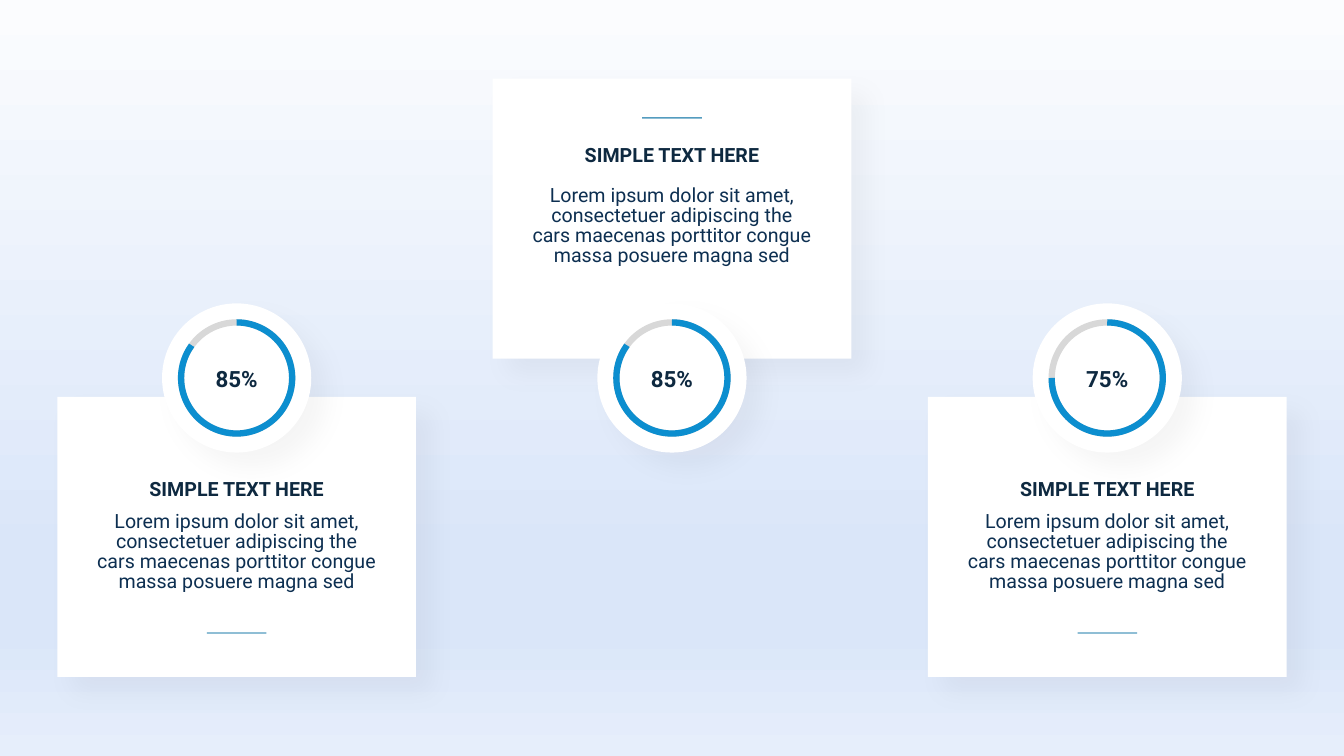
import pptx
import pptx.util
import pptx.dml.color
import pptx.enum.shapes
import pptx.enum.text
import pptx.oxml
import pptx.oxml.ns
from dataclasses import dataclass
from pptx.util import Cm, Pt

# Content: column, placement, percentage, heading, body
HEADING = "SIMPLE TEXT HERE"
BODY = ("Lorem ipsum dolor sit amet, consectetuer adipiscing the "
        "cars maecenas porttitor congue massa posuere magna sed")
CARDS = [
    (-1, "low", 85, HEADING, BODY),
    (1, "low", 75, HEADING, BODY),
    (0, "high", 85, HEADING, BODY),
]


@dataclass(frozen=True)
class Theme:
    font: str = "Roboto"
    white: str = "FFFFFF"
    heading: str = "0E2940"
    body: str = "0D2F51"
    rule: str = "0C72A5"
    track: str = "D8D8D8"
    progress: str = "0C8ECF"
    background: tuple = ((0, "FBFCFE"), (74, "DAE6F9"), (83, "DAE6F9"), (100, "E6EEFB"))
    text_size: int = 14
    percent_size: int = 16
    ring_width: float = 4.5


THEME = Theme()

# Geometry in centimetres
SLIDE_WIDTH, SLIDE_HEIGHT = 33.87, 19.05
COLUMN_PITCH = 10.97
CARD_WIDTH, CARD_HEIGHT = 9.04, 7.06
DISC_SIZE, RING_SIZE = 3.76, 2.8
RULE_LENGTH = 1.5
TOPS = {
    "low": {"card": 10.0, "heading": 11.89, "body": 12.8, "rule": 15.95},
    "high": {"card": 1.98, "heading": 3.48, "body": 4.57, "rule": 2.97},
}


def rgb(value):
    return pptx.dml.color.RGBColor.from_string(value)


def add_xml(parent, markup):
    parent.append(pptx.oxml.parse_xml(
        markup.replace("/>", f" {pptx.oxml.ns.nsdecls('a')}/>", 1)
        if markup.endswith("/>") and markup.count("<") == 1
        else markup.replace(">", f" {pptx.oxml.ns.nsdecls('a')}>", 1)))


def add_panel(shapes, kind, center, top, width, height, fill=None, line=None):
    """Preset shape: filled ones cast the soft shadow, others are outlined."""
    shape = shapes.add_shape(kind, Cm(center - width / 2), Cm(top), Cm(width), Cm(height))
    shape.shadow.inherit = False
    if fill:
        shape.fill.solid()
        shape.fill.fore_color.rgb = rgb(fill)
        shape.line.fill.background()
        effects = shape._element.spPr.find(pptx.oxml.ns.qn("a:effectLst"))
        add_xml(effects, f'<a:outerShdw blurRad="{Pt(18)}" dist="{Pt(15)}" dir="2700000" '
                         'algn="tl" rotWithShape="0"><a:srgbClr val="000000">'
                         '<a:alpha val="4000"/></a:srgbClr></a:outerShdw>')
    else:
        shape.fill.background()
        shape.line.color.rgb = rgb(line)
        shape.line.width = Pt(THEME.ring_width)
    return shape


def add_text(shapes, text, *, center, top, width, height, size, color,
             bold=False, spacing=None):
    box = shapes.add_textbox(Cm(center - width / 2), Cm(top), Cm(width), Cm(height))
    frame = box.text_frame
    frame.word_wrap = True
    frame.auto_size = pptx.enum.text.MSO_AUTO_SIZE.SHAPE_TO_FIT_TEXT
    paragraph = frame.paragraphs[0]
    paragraph.alignment = pptx.enum.text.PP_ALIGN.CENTER
    if spacing:
        paragraph.line_spacing = spacing
    run = paragraph.add_run()
    run.text = text
    run.font.name = THEME.font
    run.font.size = Pt(size)
    run.font.bold = bold
    run.font.color.rgb = rgb(color)


def add_rule(shapes, center, top):
    rule = shapes.add_connector(
        pptx.enum.shapes.MSO_CONNECTOR.STRAIGHT,
        Cm(center - RULE_LENGTH / 2), Cm(top), Cm(center + RULE_LENGTH / 2), Cm(top))
    rule.line.color.rgb = rgb(THEME.rule)
    rule.line.width = Pt(1)
    properties = rule._element.spPr
    color = properties.find(".//" + pptx.oxml.ns.qn("a:srgbClr"))
    add_xml(color, '<a:alpha val="69000"/>')
    add_xml(properties, "<a:effectLst/>")


def add_dial(slide, center, percent):
    shapes = slide.shapes.add_group_shape().shapes
    kinds = pptx.enum.shapes.MSO_SHAPE
    middle = SLIDE_HEIGHT / 2
    add_panel(shapes, kinds.OVAL, center, middle - DISC_SIZE / 2,
              DISC_SIZE, DISC_SIZE, fill=THEME.white)
    ring = (center, middle - RING_SIZE / 2, RING_SIZE, RING_SIZE)
    add_panel(shapes, kinds.OVAL, *ring, line=THEME.track)
    arc = add_panel(shapes, kinds.ARC, *ring, line=THEME.progress)
    # Adjustments hold 0.6 per degree, clockwise from three o'clock
    arc.adjustments[0] = 270 * 0.6
    arc.adjustments[1] = (270 + 3.6 * percent) % 360 * 0.6
    add_text(shapes, f"{percent}%", center=center, top=9.07, width=2.49, height=0.94,
             size=THEME.percent_size, color=THEME.heading, bold=True)


def set_background(slide):
    fill = slide.background.fill
    fill.gradient()
    fill.gradient_angle = 270
    stops = slide._element.find(".//" + pptx.oxml.ns.qn("a:gsLst"))
    for stop in list(stops):
        stops.remove(stop)
    for position, color in THEME.background:
        add_xml(stops, f'<a:gs pos="{position * 1000}"><a:srgbClr val="{color}"/></a:gs>')


def main():
    presentation = pptx.Presentation()
    presentation.slide_width = Cm(SLIDE_WIDTH)
    presentation.slide_height = Cm(SLIDE_HEIGHT)
    slide = presentation.slides.add_slide(presentation.slide_layouts[6])
    set_background(slide)

    for column, placement, percent, heading, body in CARDS:
        center = SLIDE_WIDTH / 2 + column * COLUMN_PITCH
        tops = TOPS[placement]
        # Card with its text and accent rule
        add_panel(slide.shapes, pptx.enum.shapes.MSO_SHAPE.RECTANGLE, center,
                  tops["card"], CARD_WIDTH, CARD_HEIGHT, fill=THEME.white)
        add_text(slide.shapes, body, center=center, top=tops["body"], width=7.65,
                 height=2.29, size=THEME.text_size, color=THEME.body, spacing=0.85)
        add_text(slide.shapes, heading, center=center, top=tops["heading"], width=5.92,
                 height=0.86, size=THEME.text_size, color=THEME.heading, bold=True)
        add_rule(slide.shapes, center, tops["rule"])
        # Percentage dial over the card edge
        add_dial(slide, center, percent)

    presentation.save("out.pptx")


if __name__ == "__main__":
    main()
